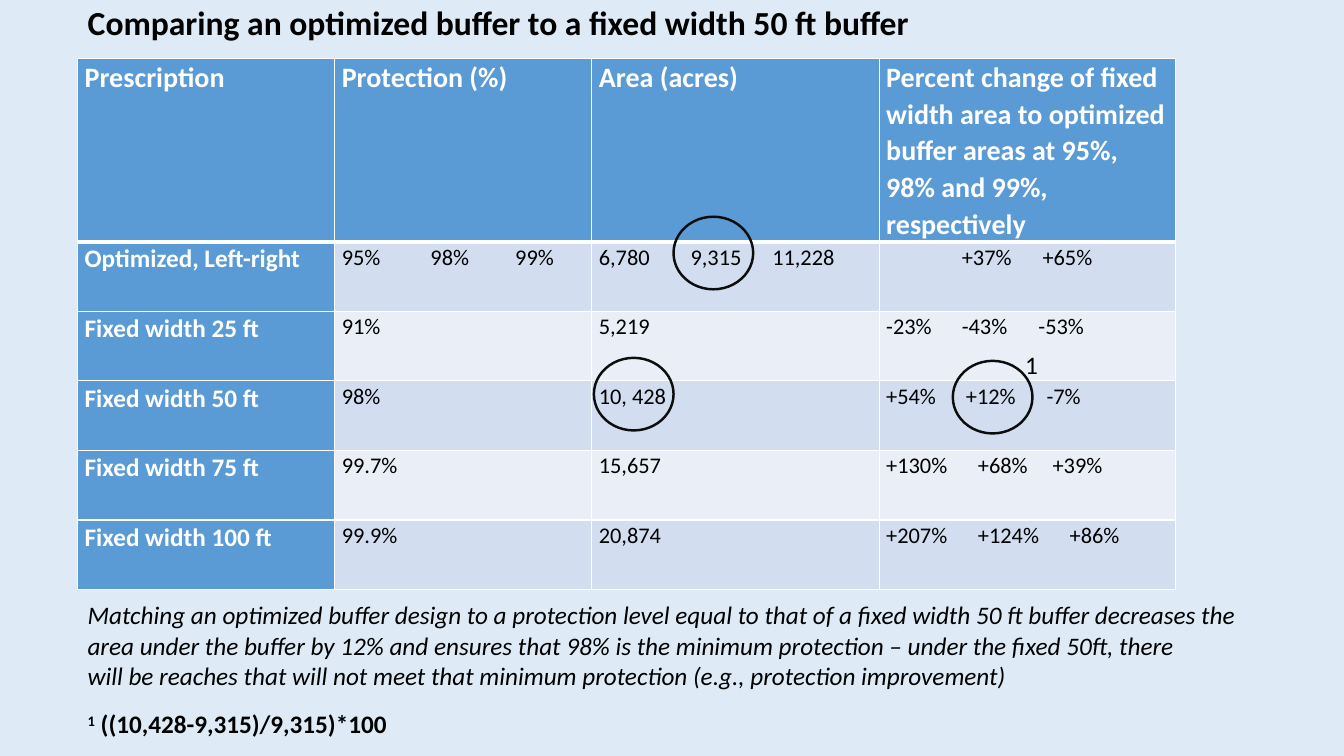
from dataclasses import dataclass
from itertools import product

from lxml import etree
from pptx import Presentation
from pptx.dml.color import RGBColor
from pptx.enum.shapes import MSO_SHAPE
from pptx.enum.text import MSO_ANCHOR, MSO_AUTO_SIZE, PP_ALIGN
from pptx.oxml.ns import qn
from pptx.util import Inches, Pt

OVAL = MSO_SHAPE.OVAL
TOP = MSO_ANCHOR.TOP
FIXED = MSO_AUTO_SIZE.NONE
LEFT = PP_ALIGN.LEFT

TITLE = "Comparing an optimized buffer to a fixed width 50 ft buffer"
HEADS = [
    ["Prescription"],
    ["Protection (%)"],
    ["Area (acres)"],
    ["Percent change of fixed width area to optimized",
     "buffer areas at 95%, 98% and 99%, respectively"],
]
# A cell lists its values, with the tab stop in inches before each later value.
ROWS = [
    [["Optimized, Left-right"], ["95%", 0.88, "98%", 1.72, "99%"],
     ["6,780", 0.91, "9,315", 1.72, "11,228"],
     ["", 0.75, "+37%", 1.55, "+65%"]],
    [["Fixed width 25 ft"], ["91%"], ["5,219"],
     ["-23%", 0.75, "-43%", 1.51, "-53%"]],
    [["Fixed width 50 ft"], ["98%"], ["10, 428"],
     ["+54%", 0.79, "+12%", 1.59, "-7%"]],
    [["Fixed width 75 ft"], ["99.7%"], ["15,657"],
     ["+130%", 0.91, "+68%", 1.65, "+39%"]],
    [["Fixed width 100 ft"], ["99.9%"], ["20,874"],
     ["+207%", 0.91, "+124%", 1.82, "+86%"]],
]
NOTE = [
    "Matching an optimized buffer design to a protection level equal to that "
    "of a fixed width 50 ft buffer decreases the",
    "area under the buffer by 12% and ensures that 98% is the minimum "
    "protection – under the fixed 50ft, there",
    "will be reaches that will not meet that minimum protection "
    "(e.g., protection improvement)",
]
MARK = "1"
SUM = " ((10,428-9,315)/9,315)*100"

# Row, column, then the offset from that cell's corner in inches.
RINGS = [(3, 2, 0.02, -0.2), (1, 2, 0.81, -0.22), (3, 3, 0.73, -0.17)]
MARK_AT = (3, 3, 1.35, -0.33)

WIDE, HIGH = 13.33, 7.5
X, Y = 0.77, 0.58
COLS = [2.55, 2.55, 2.85, 2.94]
TALLS = [1.79] + [0.69] * len(ROWS)
RING = (0.79, 0.72)


@dataclass
class Theme:
    font: str = "Calibri"
    back: str = "DEEBF7"
    head: str = "5B9BD5"
    bands: tuple = ("D2DEEF", "EAEFF7")
    white: str = "FFFFFF"
    black: str = "000000"
    ring: str = "0D0D0D"
    title: int = 24
    top: int = 20
    text: int = 18
    cell: int = 16


theme = Theme()


def rgb(code):
    return RGBColor.from_string(code)


def style(para, size, color=theme.black, bold=False, italic=False):
    font = para.font
    font.name, font.size = theme.font, Pt(size)
    font.bold, font.italic = bold, italic
    font.color.rgb = rgb(color)


def spot(row, col, dx, dy):
    """Slide position of an offset from a table cell's corner."""
    return X + sum(COLS[:col]) + dx, Y + sum(TALLS[:row]) + dy


def edge(cell, side, width):
    line = etree.SubElement(cell._tc.get_or_add_tcPr(), qn(f"a:ln{side}"),
                            w=str(Pt(width)))
    fill = etree.SubElement(line, qn("a:solidFill"))
    etree.SubElement(fill, qn("a:srgbClr"), val=theme.white)


def set_tabs(para, stops):
    tabs = etree.SubElement(para._p.get_or_add_pPr(), qn("a:tabLst"))
    for stop in stops:
        etree.SubElement(tabs, qn("a:tab"), pos=str(Inches(stop)), algn="l")


def fill_cell(cell, row, col):
    cell.margin_left = cell.margin_right = Inches(0.07)
    cell.margin_top = cell.margin_bottom = 0
    for side in "LRTB":
        thick = (row, side) in ((0, "B"), (1, "T"))
        edge(cell, side, 3 if thick else 1)
    key = row == 0 or col == 0
    cell.fill.solid()
    cell.fill.fore_color.rgb = rgb(
        theme.head if key else theme.bands[(row - 1) % 2])
    if row == 0:
        lines, stops = HEADS[col], []
    else:
        parts = ROWS[row - 1][col]
        lines, stops = ["\t".join(parts[::2])], parts[1::2]
    size = theme.top if row == 0 else theme.text if col == 0 else theme.cell
    cell.text_frame.text = "\n".join(lines)
    for para in cell.text_frame.paragraphs:
        para.line_spacing = 1.07
        if stops:
            set_tabs(para, stops)
        style(para, size, theme.white if key else theme.black, key)


def add_text(slide, box, lines, **look):
    frame = slide.shapes.add_textbox(*map(Inches, box)).text_frame
    frame.word_wrap = True
    frame.text = "\n".join(lines)
    for para in frame.paragraphs:
        style(para, theme.text, **look)
    return frame.paragraphs[0]


def add_title(slide):
    title = slide.shapes.title
    title.left, title.top = Inches(X), Inches(-0.03)
    title.width, title.height = Inches(8.46), Inches(0.5)
    frame = title.text_frame
    frame.text = TITLE
    frame.word_wrap, frame.auto_size = True, FIXED
    frame.vertical_anchor = TOP
    para = frame.paragraphs[0]
    para.alignment = LEFT
    style(para, theme.title, bold=True)


def add_grid(slide):
    table = slide.shapes.add_table(
        len(TALLS), len(COLS), Inches(X), Inches(Y),
        Inches(sum(COLS)), Inches(sum(TALLS))).table
    for col, width in zip(table.columns, COLS):
        col.width = Inches(width)
    for row, tall in zip(table.rows, TALLS):
        row.height = Inches(tall)
    for row, col in product(range(len(TALLS)), range(len(COLS))):
        fill_cell(table.cell(row, col), row, col)


def add_ring(slide, place):
    ring = slide.shapes.add_shape(
        OVAL, *map(Inches, (*spot(*place), *RING)))
    ring.shadow.inherit = False
    ring.fill.background()
    ring.line.color.rgb = rgb(theme.ring)
    ring.line.width = Pt(1.75)


def main():
    deck = Presentation()
    deck.slide_width, deck.slide_height = Inches(WIDE), Inches(HIGH)
    slide = deck.slides.add_slide(deck.slide_layouts[5])
    slide.background.fill.solid()
    slide.background.fill.fore_color.rgb = rgb(theme.back)

    add_title(slide)
    add_grid(slide)
    for place in RINGS:
        add_ring(slide, place)
    add_text(slide, (X, 5.9, 11.81, 1.01), NOTE, italic=True)
    foot = add_text(slide, (X, 6.98, 3.22, 0.4), [MARK], bold=True)
    foot.runs[0]._r.get_or_add_rPr().set("baseline", "30000")
    foot.add_run().text = SUM
    add_text(slide, (*spot(*MARK_AT), 0.33, 0.4), [MARK])
    deck.save("out.pptx")


if __name__ == "__main__":
    main()
